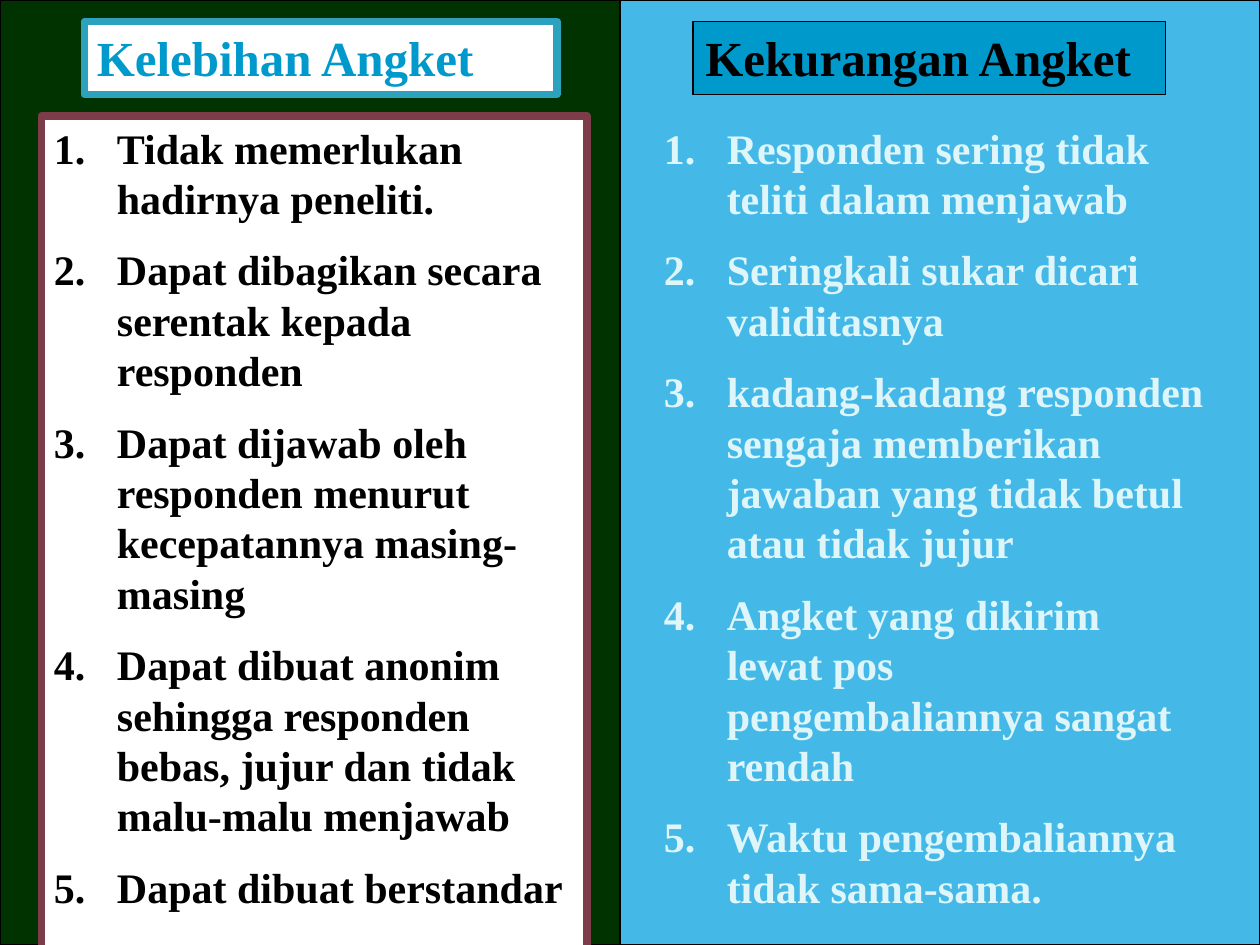
from pptx import Presentation
from pptx.dml.color import RGBColor
from pptx.enum.shapes import MSO_SHAPE
from pptx.enum.text import MSO_ANCHOR, PP_ALIGN
from pptx.oxml.ns import qn
from pptx.util import Inches, Pt
from lxml import etree

RECTANGLE = MSO_SHAPE.RECTANGLE
TOP = MSO_ANCHOR.TOP
LEFT = PP_ALIGN.LEFT

HEADING_TOP, HEADING_WIDTH, HEADING_HEIGHT = 0.17, 3.75, 0.58
LIST_TOP = 0.92
BLACK, WHITE = "000000", "FFFFFF"

STRENGTHS = [
    "Tidak memerlukan hadirnya peneliti.",
    "Dapat dibagikan secara serentak kepada responden",
    "Dapat dijawab oleh responden menurut kecepatannya masing-masing",
    "Dapat dibuat anonim sehingga responden bebas, jujur dan tidak malu-malu menjawab",
    "Dapat dibuat berstandar",
]
WEAKNESSES = [
    "Responden sering tidak teliti dalam menjawab",
    "Seringkali sukar dicari validitasnya",
    "kadang-kadang responden sengaja memberikan jawaban yang tidak betul atau tidak jujur",
    "Angket yang dikirim lewat pos pengembaliannya sangat rendah",
    "Waktu pengembaliannya tidak sama-sama.",
]


def rgb(color):
    return RGBColor.from_string(color)


def add_panel(slide, left, top, width, height, fill, line, line_width=0.75):
    panel = slide.shapes.add_shape(
        RECTANGLE, Inches(left), Inches(top), Inches(width), Inches(height))
    panel.shadow.inherit = False
    panel.fill.solid()
    panel.fill.fore_color.rgb = rgb(fill)
    panel.line.color.rgb = rgb(line)
    panel.line.width = Pt(line_width)
    return panel


def style_paragraph(paragraph, size, color):
    paragraph.alignment = LEFT
    font_format = {"name": "Times New Roman", "size": Pt(size), "bold": True}
    for attribute, value in font_format.items():
        setattr(paragraph.font, attribute, value)
    paragraph.font.color.rgb = rgb(color)


def prepare_frame(shape):
    frame = shape.text_frame
    frame.word_wrap = True
    frame.vertical_anchor = TOP
    return frame


def write_heading(shape, text, color):
    heading = prepare_frame(shape).paragraphs[0]
    heading.text = text
    style_paragraph(heading, 28, color)


def number_paragraph(paragraph):
    """Number the paragraph 1., 2., ... with a half-inch hanging indent."""
    properties = paragraph._p.get_or_add_pPr()
    properties.set("marL", str(Inches(0.5)))
    properties.set("indent", str(Inches(-0.5)))
    numbering = etree.SubElement(properties, qn("a:buAutoNum"))
    numbering.set("type", "arabicPeriod")


def write_numbered_list(shape, items, color):
    frame = prepare_frame(shape)
    for index, item in enumerate(items):
        entry = frame.add_paragraph() if index else frame.paragraphs[0]
        entry.text = item
        number_paragraph(entry)
        if index:
            entry.space_before = Pt(12)
        style_paragraph(entry, 24, color)


def main():
    presentation = Presentation()
    presentation.slide_width = Inches(10)
    presentation.slide_height = Inches(7.5)
    slide = presentation.slides.add_slide(presentation.slide_layouts[6])

    add_panel(slide, 0, 0, 4.92, 7.5, "003300", BLACK)
    add_panel(slide, 4.92, 0, 5.08, 7.5, "44B9E8", BLACK)

    strengths_heading = add_panel(slide, 0.67, HEADING_TOP, HEADING_WIDTH,
                                  HEADING_HEIGHT, WHITE, "2DA2BF", 4.33)
    write_heading(strengths_heading, "Kelebihan Angket", "0099CC")
    strengths = add_panel(slide, 0.33, LIST_TOP, 4.33, 7.69,
                          WHITE, "7D3C4A", 4.33)
    write_numbered_list(strengths, STRENGTHS, BLACK)

    weaknesses_heading = add_panel(slide, 5.5, HEADING_TOP, HEADING_WIDTH,
                                   HEADING_HEIGHT, "0099CC", BLACK)
    write_heading(weaknesses_heading, "Kekurangan Angket", BLACK)
    weaknesses = slide.shapes.add_textbox(
        Inches(5.17), Inches(LIST_TOP), Inches(4.5), Inches(6.5))
    write_numbered_list(weaknesses, WEAKNESSES, "DEF5FA")

    presentation.save("out.pptx")


if __name__ == "__main__":
    main()
